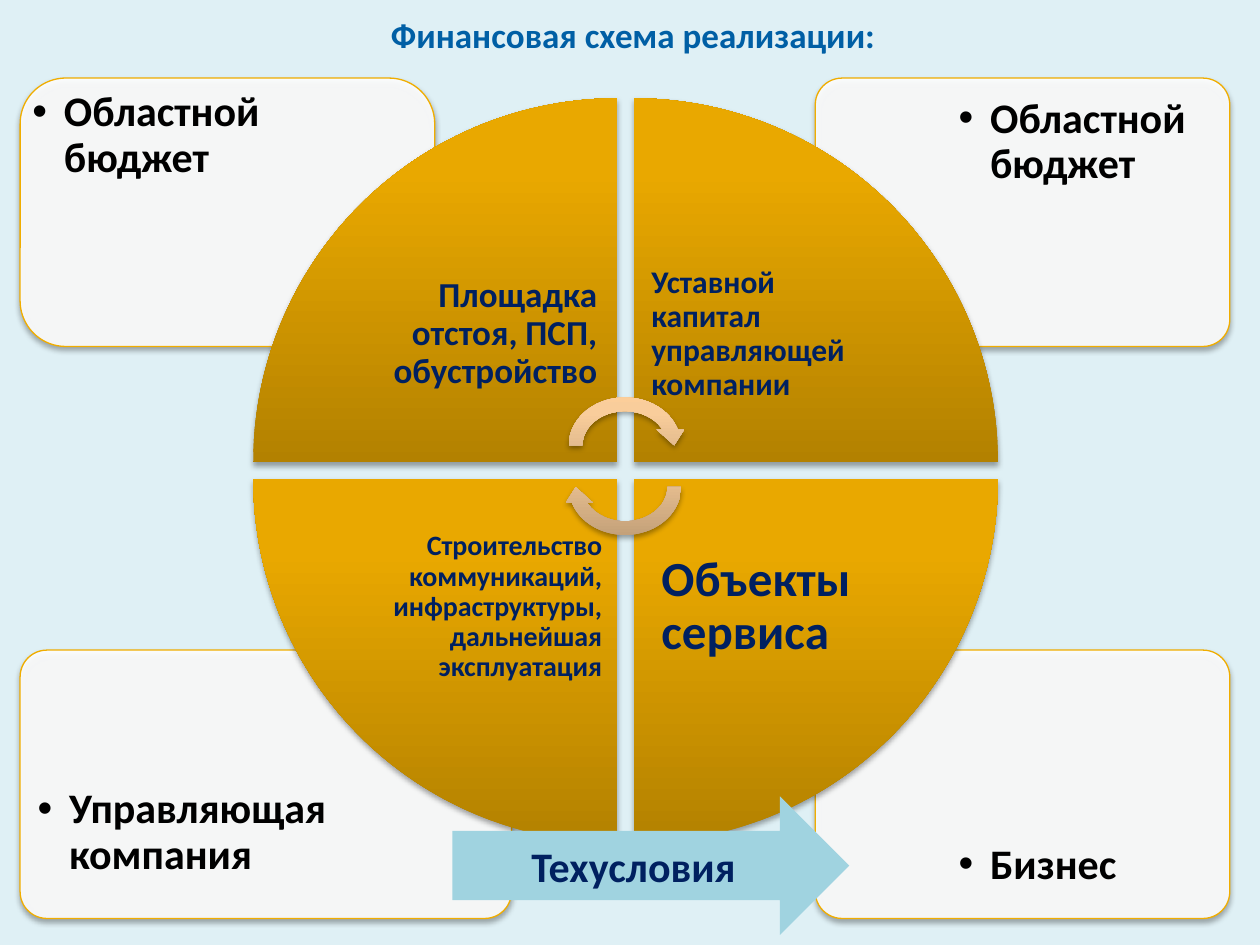
import pptx
import pptx.util
import pptx.oxml
import pptx.oxml.ns
import pptx.dml.color
import pptx.enum.shapes
import pptx.enum.text

Inches, Pt = pptx.util.Inches, pptx.util.Pt
Kind = pptx.enum.shapes.MSO_SHAPE
Align = pptx.enum.text.PP_ALIGN
Anchor = pptx.enum.text.MSO_ANCHOR
qn = pptx.oxml.ns.qn
NS = pptx.oxml.ns.nsdecls("a")

HEX = {
    "back": "DFF0F5", "title": "005FA5", "card": "FFFFFF", "edge": "F0AD00",
    "ink": "000000", "navy": "002060", "arrow": "A0D3E0",
}
GOLD = ("B38100", "E9A800", "EAA800")
PEACH = ("C09E77", "F9CD9B", "FCCE9A")

TITLE = "Финансовая схема реализации:"
LINK = "Техусловия"
CARDS = [
    ("Бизнес", (6.47, 5.16, 3.29, 2.13), 0.1, (7.51, 5.74, 2.21, 1.51), Anchor.BOTTOM, 0.2),
    ("Управляющая компания", (0.16, 5.16, 3.9, 2.13), 0.1, (0.2, 5.74, 2.63, 1.51), Anchor.BOTTOM, 0.28),
    ("Областной бюджет", (6.47, 0.62, 3.29, 2.13), 0.1, (7.51, 0.67, 2.21, 1.51), Anchor.TOP, 0.1),
    ("Областной бюджет", (0.16, 0.62, 3.29, 2.13), 0.17, (0.16, 0.62, 2.3, 1.6), Anchor.TOP, 0.1),
]
WEDGES = [
    ("Площадка отстоя, ПСП, обустройство", 0, 0, 20, 0.16),
    ("Уставной капитал управляющей компании", 1, 0, 18, 0.14),
    ("Объекты сервиса", 1, 1, 28, 0.22),
    ("Строительство коммуникаций, инфраструктуры, дальнейшая эксплуатация", 0, 1, 16, 0.12),
]
LEFT, TOP, SIDE, GAP, INNER = 2.01, 0.78, 2.89, 0.13, 2.04


def rgb(name):
    return pptx.dml.color.RGBColor.from_string(HEX[name])


def style(para, size, color):
    for run in para.runs:
        font = run.font
        font.name, font.size, font.bold = "Calibri", Pt(size), True
        font.color.rgb = rgb(color)


def pad(frame, left, top, right, bottom):
    frame.margin_left, frame.margin_top = Inches(left), Inches(top)
    frame.margin_right, frame.margin_bottom = Inches(right), Inches(bottom)


def label(slide, text, box, size, color, anchor, pads):
    frame = slide.shapes.add_textbox(*map(Inches, box)).text_frame
    frame.word_wrap = True
    frame.vertical_anchor = anchor
    pad(frame, *pads)
    frame.text = text
    para = frame.paragraphs[0]
    para.line_spacing = 0.9
    style(para, size, color)
    return para


def bullet(para):
    props = para._p.get_or_add_pPr()
    props.set("marL", str(Inches(0.25)))
    props.set("indent", str(Inches(-0.25)))
    props.append(pptx.oxml.parse_xml(f'<a:buFont {NS} typeface="Arial"/>'))
    props.append(pptx.oxml.parse_xml(f'<a:buChar {NS} char="•"/>'))


def shape(slide, kind, box, turn=0):
    item = slide.shapes.add_shape(kind, *map(Inches, box))
    item.rotation = turn
    item.shadow.inherit = False
    item.line.fill.background()
    return item


def shade(item):
    item._element.spPr.find(qn("a:effectLst")).append(pptx.oxml.parse_xml(
        f'<a:outerShdw {NS} blurRad="40000" dist="23000" dir="5400000" rotWithShape="0">'
        '<a:srgbClr val="000000"><a:alpha val="35000"/></a:srgbClr></a:outerShdw>'))


def blend(item, colors):
    stops = "".join(
        f'<a:gs pos="{pos}"><a:srgbClr val="{color}"/></a:gs>'
        for pos, color in zip((0, 80000, 100000), colors))
    item.fill.background()
    props = item._element.spPr
    props.replace(props.find(qn("a:noFill")), pptx.oxml.parse_xml(
        f'<a:gradFill {NS} rotWithShape="0"><a:gsLst>{stops}</a:gsLst>'
        '<a:lin ang="16200000" scaled="0"/></a:gradFill>'))
    shade(item)


def main():
    deck = pptx.Presentation()
    deck.slide_width, deck.slide_height = Inches(10), Inches(7.5)
    slide = deck.slides.add_slide(deck.slide_layouts[5])
    slide.background.fill.solid()
    slide.background.fill.fore_color.rgb = rgb("back")

    title = slide.shapes.title
    title.left, title.top, title.width, title.height = map(Inches, (2.37, 0.08, 5.26, 0.47))
    frame = title.text_frame
    frame.text = TITLE
    frame.vertical_anchor = Anchor.TOP
    pad(frame, 0.1, 0.03, 0.05, 0)
    frame.paragraphs[0].alignment = Align.CENTER
    style(frame.paragraphs[0], 20, "title")

    for text, box, curve, area, anchor, low in CARDS:
        card = shape(slide, Kind.ROUNDED_RECTANGLE, box)
        card.adjustments[0] = curve
        card.fill.solid()
        card.fill.fore_color.rgb = rgb("card")
        color = card._element.spPr.find(qn("a:solidFill"))[0]
        color.append(pptx.oxml.parse_xml(f'<a:alpha {NS} val="90000"/>'))
        card.line.color.rgb = rgb("edge")
        card.line.width = Pt(0.75)
        shade(card)
        bullet(label(slide, text, area, 24, "ink", anchor, (0.1, 0.1, 0.1, low)))

    for turn, (text, col, row, size, inset) in enumerate(WEDGES):
        x, y = LEFT + col * (SIDE + GAP), TOP + row * (SIDE + GAP)
        blend(shape(slide, Kind.PIE_WEDGE, (x, y, SIDE, SIDE), turn * 90), GOLD)
        shift = SIDE - INNER
        area = (x + (1 - col) * shift, y + (1 - row) * shift, INNER, INNER)
        para = label(slide, text, area, size, "navy", Anchor.MIDDLE, (inset,) * 4)
        para.alignment = Align.LEFT if col else Align.RIGHT

    for y, turn in ((3.1, 0), (3.43, 180)):
        blend(shape(slide, Kind.CIRCULAR_ARROW, (4.46, y, 1, 0.87), turn), PEACH)

    arrow = shape(slide, Kind.RIGHT_ARROW, (3.59, 6.32, 3.15, 1.1))
    arrow.fill.solid()
    arrow.fill.fore_color.rgb = rgb("arrow")
    arrow.text_frame.text = LINK
    arrow.text_frame.vertical_anchor = Anchor.MIDDLE
    arrow.text_frame.paragraphs[0].alignment = Align.CENTER
    style(arrow.text_frame.paragraphs[0], 24, "navy")

    deck.save("out.pptx")


if __name__ == "__main__":
    main()
